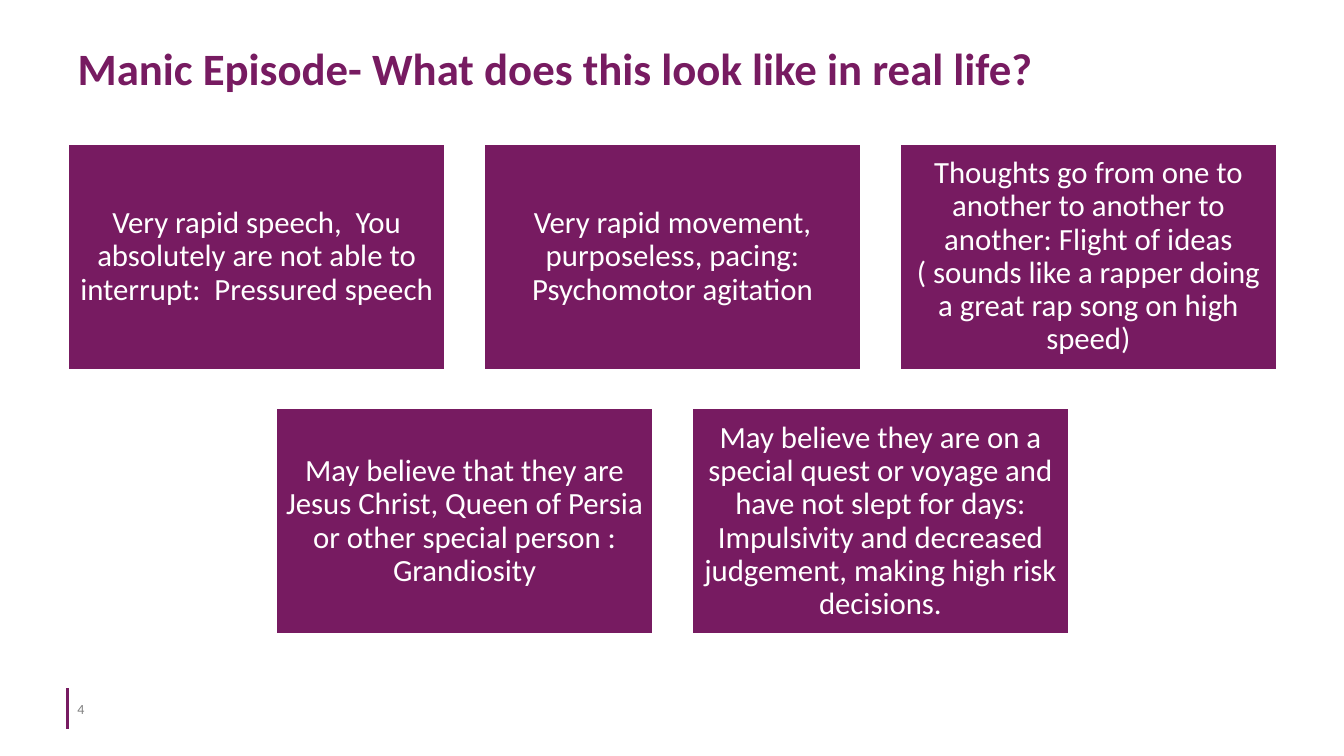
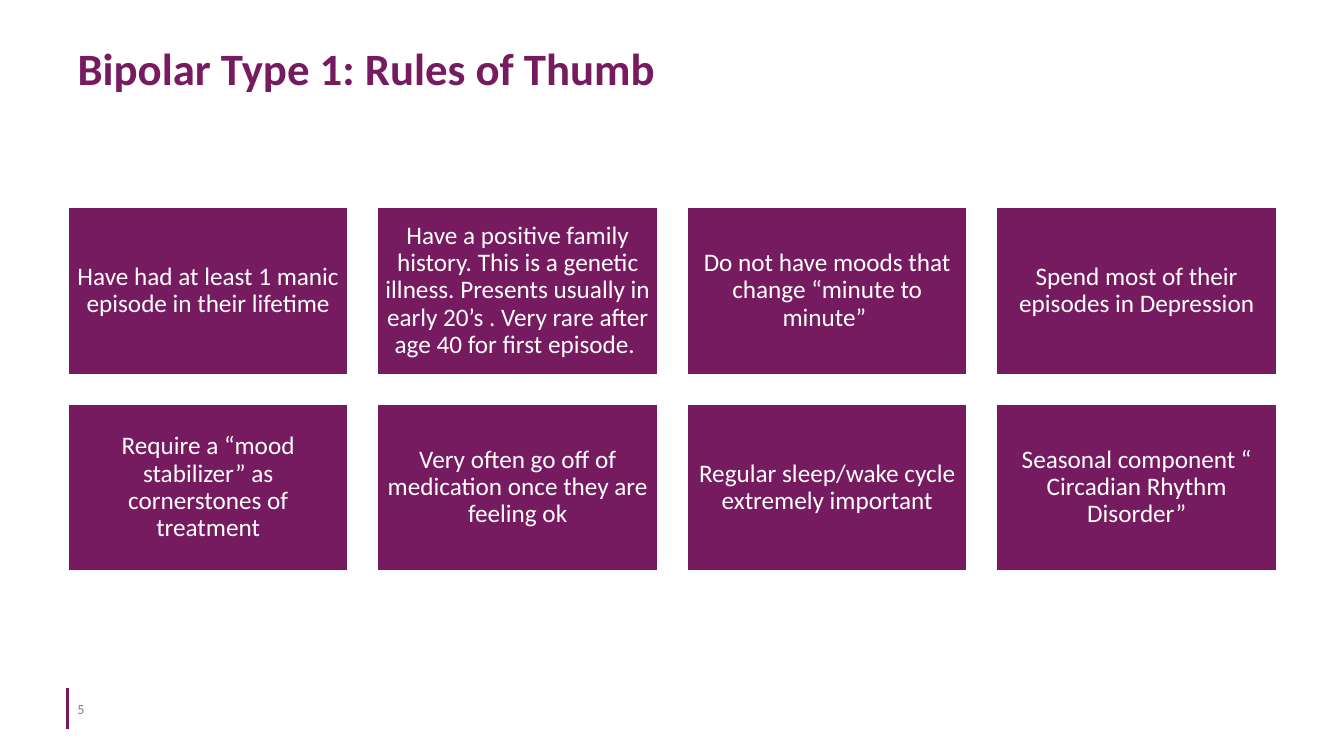
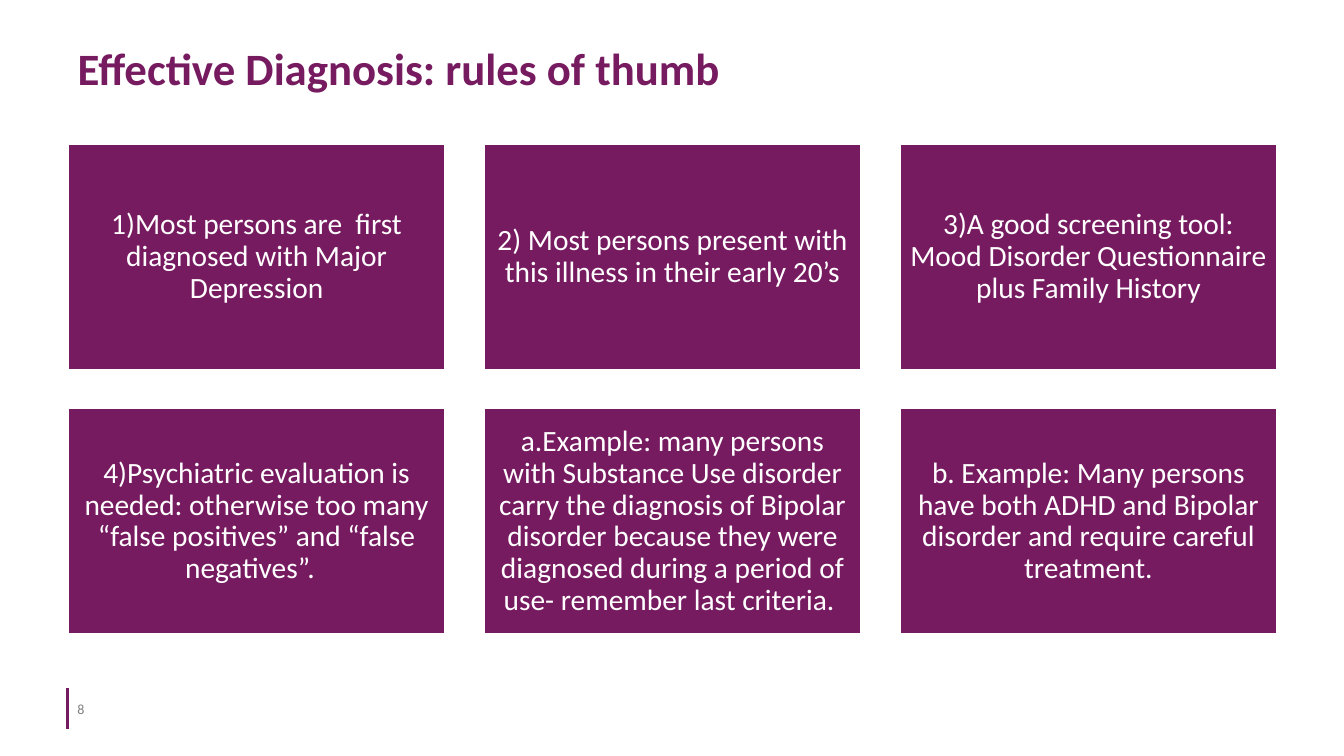
"""Build three slides of centred card grids about bipolar disorder."""
from dataclasses import dataclass

import pptx
import pptx.dml.color
import pptx.enum.shapes
import pptx.enum.text
import pptx.oxml
import pptx.presentation
import pptx.slide
import pptx.text.text
import pptx.util

Inches = pptx.util.Inches
Pt = pptx.util.Pt
RGBColor = pptx.dml.color.RGBColor
Align = pptx.enum.text.PP_ALIGN
Anchor = pptx.enum.text.MSO_ANCHOR


@dataclass(frozen=True)
class Theme:
    font: str = "Calibri"
    plum: RGBColor = RGBColor(0x77, 0x1B, 0x61)
    white: RGBColor = RGBColor(0xFF, 0xFF, 0xFF)
    grey: RGBColor = RGBColor(0x80, 0x80, 0x80)
    title_size: int = 32
    number_size: int = 10
    margin: float = 0.67
    content_width: float = 12
    grid_middle: float = 3.86
    gap_ratio: float = 0.1
    height_ratio: float = 0.6
    inset_ratio: float = 0.3
    footer_top: float = 6.83
    footer_height: float = 0.4


@dataclass(frozen=True)
class CardPage:
    number: int
    title: str
    columns: int
    text_size: int
    cards: tuple[str, ...]


THEME = Theme()

PAGES = (
    CardPage(4, "Manic Episode- What does this look like in real life?", 3, 22, (
        "Very rapid speech,  You absolutely are not able to interrupt:  Pressured speech",
        "Very rapid movement, purposeless, pacing: Psychomotor agitation",
        "Thoughts go from one to another to another to another: Flight of ideas "
        "( sounds like a rapper doing a great rap song on high speed)",
        "May believe that they are Jesus Christ, Queen of Persia or other special person : "
        "Grandiosity",
        "May believe they are on a special quest or voyage and have not slept for days: "
        "Impulsivity and decreased judgement, making high risk decisions.",
    )),
    CardPage(5, "Bipolar Type 1: Rules of Thumb", 4, 18, (
        "Have had at least 1 manic episode in their lifetime",
        "Have a positive family history. This is a genetic illness. Presents usually in "
        "early 20’s . Very rare after age 40 for first episode. ",
        "Do not have moods that change “minute to minute” ",
        "Spend most of their episodes in Depression",
        "Require a “mood stabilizer” as cornerstones of treatment",
        "Very often go off of medication once they are feeling ok",
        "Regular sleep/wake cycle extremely important",
        "Seasonal component “ Circadian Rhythm Disorder”",
    )),
    CardPage(8, "Effective Diagnosis: rules of thumb", 3, 21, (
        "1)Most persons are  first diagnosed with Major Depression",
        "2) Most persons present with this illness in their early 20’s",
        "3)A good screening tool: Mood Disorder Questionnaire plus Family History",
        "4)Psychiatric evaluation is needed: otherwise too many “false positives” and "
        "“false negatives”.  ",
        "a.Example: many persons with Substance Use disorder carry the diagnosis of Bipolar "
        "disorder because they were diagnosed during a period of use- remember last criteria. ",
        "b. Example: Many persons have both ADHD and Bipolar disorder and require careful "
        "treatment.",
    )),
)


def write_text(frame: pptx.text.text.TextFrame, text: str, size: int, color: RGBColor,
               align: Align = Align.LEFT, bold: bool = False) -> None:
    frame.text = text
    frame.word_wrap = True
    frame.auto_size = pptx.enum.text.MSO_AUTO_SIZE.NONE
    frame.vertical_anchor = Anchor.MIDDLE
    para = frame.paragraphs[0]
    para.alignment = align
    for span in para.runs:
        span.font.name = THEME.font
        span.font.size = Pt(size)
        span.font.bold = bold
        span.font.color.rgb = color


def add_title(page: pptx.slide.Slide, text: str) -> None:
    title = page.shapes.title
    title.left, title.top = Inches(THEME.margin), Inches(0.15)
    title.width, title.height = Inches(THEME.content_width), Inches(1.04)
    write_text(title.text_frame, text, THEME.title_size, THEME.plum, bold=True)


def add_footer(page: pptx.slide.Slide, number: int) -> None:
    left, top = Inches(THEME.margin), Inches(THEME.footer_top)
    height = Inches(THEME.footer_height)
    rule = page.shapes.add_connector(
        pptx.enum.shapes.MSO_CONNECTOR.STRAIGHT, left, top + height, left, top)
    rule.line.color.rgb = THEME.plum
    rule.line.width = Pt(2.25)
    rule._element.spPr.append(pptx.oxml.parse_xml(
        '<a:effectLst xmlns:a="http://schemas.openxmlformats.org/drawingml/2006/main"/>'))
    box = page.shapes.add_textbox(left, top, Inches(0.61), height)
    write_text(box.text_frame, str(number), THEME.number_size, THEME.grey)


def add_card(page: pptx.slide.Slide, text: str, size: int,
             left: float, top: float, width: float, height: float) -> None:
    card = page.shapes.add_shape(
        pptx.enum.shapes.MSO_SHAPE.RECTANGLE,
        Inches(left), Inches(top), Inches(width), Inches(height))
    card.shadow.inherit = False
    card.fill.solid()
    card.fill.fore_color.rgb = THEME.plum
    card.line.color.rgb = THEME.white
    card.line.width = Pt(2)
    frame = card.text_frame
    inset = Pt(size * THEME.inset_ratio)
    frame.margin_left = frame.margin_right = inset
    frame.margin_top = frame.margin_bottom = inset
    write_text(frame, text, size, THEME.white, Align.CENTER)
    frame.paragraphs[0].line_spacing = 0.9


def add_grid(page: pptx.slide.Slide, content: CardPage) -> None:
    columns = content.columns
    width = THEME.content_width / (columns + THEME.gap_ratio * (columns - 1))
    gap = width * THEME.gap_ratio
    height = width * THEME.height_ratio
    rows = [content.cards[start:start + columns]
            for start in range(0, len(content.cards), columns)]
    top = THEME.grid_middle - (len(rows) * (height + gap) - gap) / 2
    for row_index, row in enumerate(rows):
        row_width = len(row) * (width + gap) - gap
        left = THEME.margin + (THEME.content_width - row_width) / 2
        for column, text in enumerate(row):
            add_card(page, text, content.text_size, left + column * (width + gap),
                     top + row_index * (height + gap), width, height)


def add_page(deck: pptx.presentation.Presentation, content: CardPage) -> None:
    page = deck.slides.add_slide(deck.slide_layouts.get_by_name("Title Only"))
    add_title(page, content.title)
    add_footer(page, content.number)
    add_grid(page, content)


def main() -> None:
    deck = pptx.Presentation()
    deck.slide_width, deck.slide_height = Inches(13.33), Inches(7.5)
    for content in PAGES:
        add_page(deck, content)
    deck.save("out.pptx")


if __name__ == "__main__":
    main()
